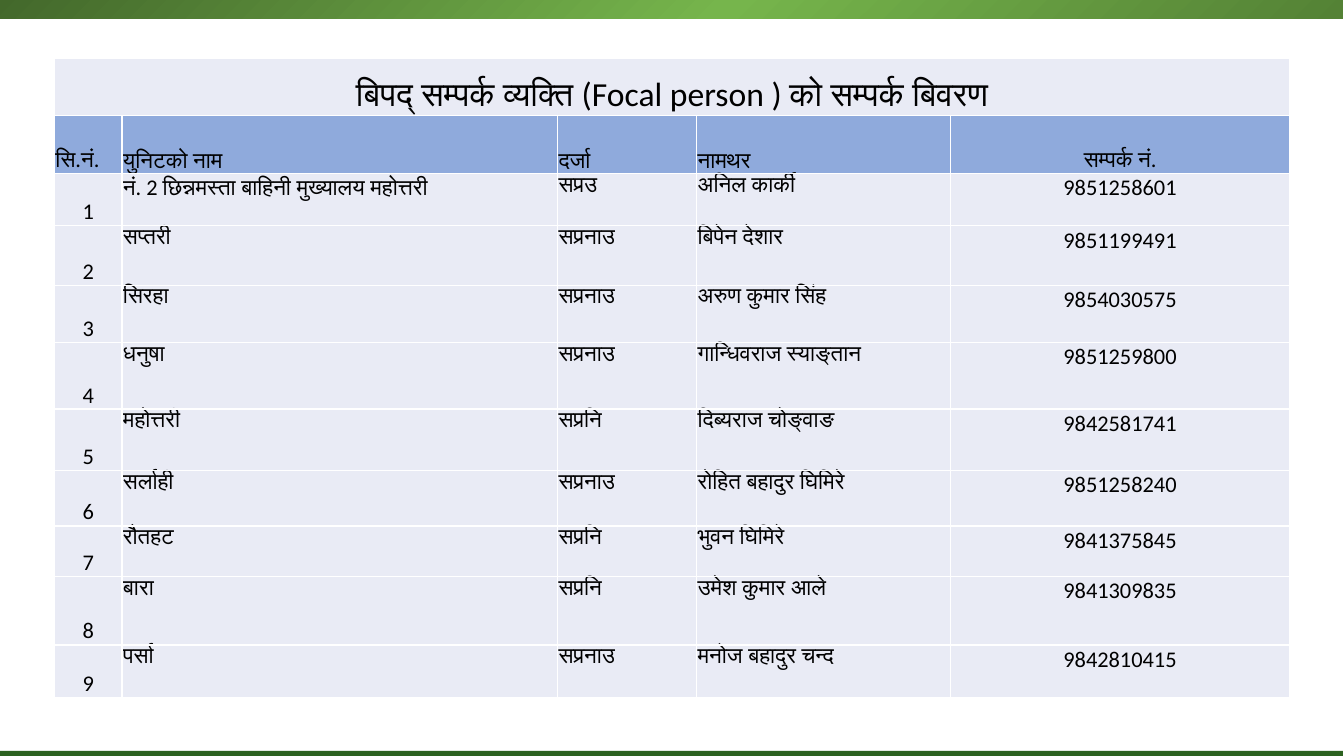
import pptx
import pptx.dml.color
import pptx.enum.shapes
import pptx.enum.text
import pptx.oxml
import pptx.oxml.ns
import pptx.util

ALIGN = pptx.enum.text.PP_ALIGN
ANCHOR = pptx.enum.text.MSO_ANCHOR
COLORS = {
    "text": "000000", "border": "FFFFFF", "body": "E9EBF5", "header": "8FAADC",
    "footer": "2C6220", "green": "548235", "bright": "76B54C", "dark": "43682B",
}
NS = pptx.oxml.ns.nsdecls("a")

TITLE = "बिपद् सम्पर्क व्यक्ति (Focal person ) को सम्पर्क बिवरण"
HEADINGS = ["सि.नं.", "युनिटको नाम", "दर्जा", "नामथर", "सम्पर्क नं."]
CONTACTS = [
    ("नं. 2 छिन्नमस्ता बाहिनी मुख्यालय महोत्तरी", "सप्रउ", "अनिल कार्की", "9851258601"),
    ("सप्तरी", "सप्रनाउ", "बिपेन देशार", "9851199491"),
    ("सिरहा", "सप्रनाउ", "अरुण कुमार सिंह", "9854030575"),
    ("धनुषा", "सप्रनाउ", "गान्धिवराज स्याङ्तान", "9851259800"),
    ("महोत्तरी", "सप्रनि", "दिब्यराज चोङ्वाङ", "9842581741"),
    ("सर्लाही", "सप्रनाउ", "रोहित बहादुर घिमिरे", "9851258240"),
    ("रौतहट", "सप्रनि", "भुवन घिमिरे", "9841375845"),
    ("बारा", "सप्रनि", "उमेश कुमार आले", "9841309835"),
    ("पर्सा", "सप्रनाउ", "मनोज बहादुर चन्द", "9842810415"),
]
# Relative sizes: they are scaled to fill the table's area
COLUMN_WEIGHTS = [0.67, 4.32, 1.38, 2.52, 3.36]
ROW_WEIGHTS = [0.57, 0.57, 0.52, 0.59, 0.57, 0.66, 0.61, 0.55, 0.5, 0.68, 0.52]


class SlideBuilder:
    """Places elements by shares of the slide's width and height."""

    font = "Calibri"

    def __init__(self, deck):
        self.deck = deck
        self.slide = deck.slides.add_slide(deck.slide_layouts[6])

    def area(self, left, top, width, height):
        across, down = self.deck.slide_width, self.deck.slide_height
        return (round(left * across), round(top * down),
                round(width * across), round(height * down))

    def bar(self, area, color):
        strip = self.slide.shapes.add_shape(
            pptx.enum.shapes.MSO_SHAPE.RECTANGLE, *self.area(*area))
        strip.shadow.inherit = False
        strip.line.fill.background()
        strip.fill.solid()
        strip.fill.fore_color.rgb = pptx.dml.color.RGBColor.from_string(COLORS[color])
        return strip

    def radial_bar(self, area, stops):
        """Bar whose gradient spreads from its bottom right corner."""
        properties = self.bar(area, stops[0][1])._element.spPr
        marks = "".join(
            f'<a:gs pos="{percent * 1000}"><a:srgbClr val="{COLORS[color]}"/></a:gs>'
            for percent, color in stops)
        gradient = pptx.oxml.parse_xml(
            f'<a:gradFill {NS} rotWithShape="1"><a:gsLst>{marks}</a:gsLst>'
            '<a:path path="circle"><a:fillToRect l="100000" t="100000"/></a:path>'
            '</a:gradFill>')
        solid = properties.find(pptx.oxml.ns.qn("a:solidFill"))
        properties.replace(solid, gradient)

    def table(self, area, column_weights, row_weights):
        left, top, width, height = self.area(*area)
        grid = self.slide.shapes.add_table(
            len(row_weights), len(column_weights), left, top, width, height).table
        grid.first_row = grid.horz_banding = False
        for column, weight in zip(grid.columns, column_weights):
            column.width = round(width * weight / sum(column_weights))
        for row, weight in zip(grid.rows, row_weights):
            row.height = round(height * weight / sum(row_weights))
        return grid

    def cell(self, cell, text, align, anchor, fill="body", size=16):
        cell.margin_left = cell.margin_right = cell.margin_top = pptx.util.Inches(0.01)
        cell.margin_bottom = 0
        cell.vertical_anchor = anchor
        properties = cell._tc.get_or_add_tcPr()
        for side in ("lnL", "lnR", "lnT", "lnB"):
            properties.append(pptx.oxml.parse_xml(
                f'<a:{side} {NS} w="12700"><a:solidFill>'
                f'<a:srgbClr val="{COLORS["border"]}"/></a:solidFill></a:{side}>'))
        cell.fill.solid()
        cell.fill.fore_color.rgb = pptx.dml.color.RGBColor.from_string(COLORS[fill])
        cell.text_frame.text = text
        paragraph = cell.text_frame.paragraphs[0]
        paragraph.alignment = align
        for font in [paragraph.font] + [run.font for run in paragraph.runs]:
            font.name = self.font
            font.size = pptx.util.Pt(size)
            font.color.rgb = pptx.dml.color.RGBColor.from_string(COLORS["text"])


def main():
    deck = pptx.Presentation()
    deck.slide_width = pptx.util.Inches(13.33)
    deck.slide_height = pptx.util.Inches(7.5)
    builder = SlideBuilder(deck)

    builder.bar((-0.01 / 13.33, 7.45 / 7.5, 1, 0.05 / 7.5), "footer")
    builder.radial_bar((-0.01 / 13.33, -0.03 / 7.5, 1, 0.21 / 7.5),
                       [(0, "green"), (46, "bright"), (100, "dark")])

    contacts = builder.table((0.54 / 13.33, 0.58 / 7.5, 12.25 / 13.33, 6.34 / 7.5),
                             COLUMN_WEIGHTS, ROW_WEIGHTS)
    last = len(HEADINGS) - 1
    for column in range(len(HEADINGS)):
        builder.cell(contacts.cell(0, column), TITLE if column == 0 else "",
                     ALIGN.CENTER, ANCHOR.BOTTOM, size=24)
    contacts.cell(0, 0).merge(contacts.cell(0, last))

    for column, heading in enumerate(HEADINGS):
        builder.cell(contacts.cell(1, column), heading,
                     ALIGN.CENTER if column == last else ALIGN.LEFT,
                     ANCHOR.BOTTOM, "header")

    for number, contact in enumerate(CONTACTS, 1):
        for column, text in enumerate((str(number), *contact)):
            builder.cell(contacts.cell(number + 1, column), text,
                         ALIGN.CENTER if column in (0, last) else ALIGN.JUSTIFY,
                         ANCHOR.BOTTOM if column == 0 else ANCHOR.TOP)

    deck.save("out.pptx")


if __name__ == "__main__":
    main()
